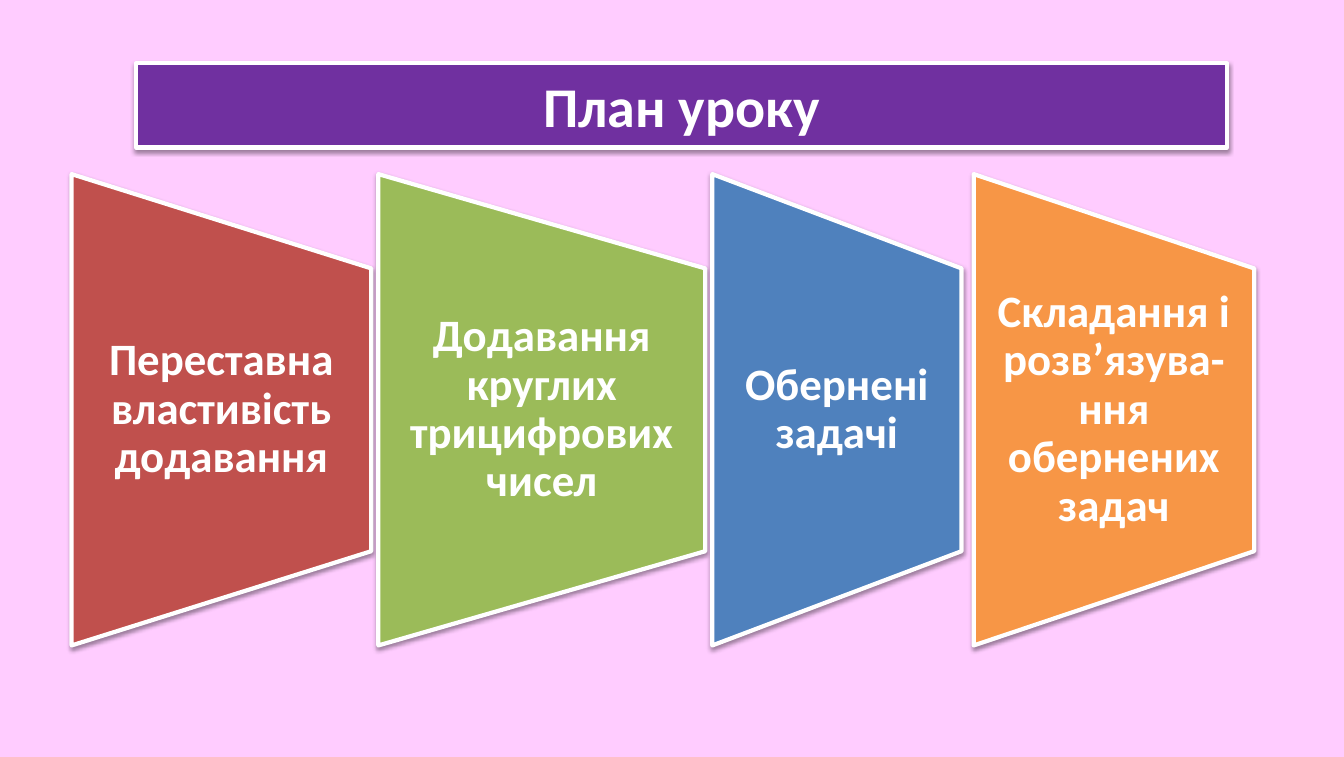
from dataclasses import dataclass

from lxml.etree import SubElement
from pptx import Presentation
from pptx.dml.color import RGBColor
from pptx.enum.shapes import MSO_SHAPE as Shape
from pptx.enum.text import MSO_ANCHOR as Anchor, MSO_AUTO_SIZE as AutoSize, PP_ALIGN as Align
from pptx.oxml.ns import qn
from pptx.util import Pt

PX = 9144
COLORS = {
    "pink": "FFCCFF",
    "purple": "7030A0",
    "orange": "F79646",
    "red": "C0504D",
    "green": "9BBB59",
    "blue": "4F81BD",
    "white": "FFFFFF",
    "black": "000000",
}
STAGE_CENTER_Y, STAGE_HEIGHT, TEXT_HEIGHT = 406, 467, 280


@dataclass
class Stage:
    text: str
    left: int
    width: int
    color: str


STAGES = [
    Stage("Складання і розв’язува-ння обернених задач", 965, 278, "orange"),
    Stage("Переставна властивість додавання", 71, 297, "red"),
    Stage("Додавання круглих трицифрових чисел", 375, 324, "green"),
    Stage("Обернені задачі", 706, 247, "blue"),
]


def rgb(name: str) -> RGBColor:
    return RGBColor.from_string(COLORS[name])


def px(*lengths: float) -> list[int]:
    return [round(length * PX) for length in lengths]


def set_attrs(target, values: dict) -> None:
    for name, value in values.items():
        setattr(target, name, value)


def style_shape(sp, color: str) -> None:
    sp.fill.solid()
    sp.fill.fore_color.rgb = rgb(color)
    sp.line.color.rgb = rgb("white")
    sp.line.width = Pt(3)
    effects = SubElement(sp._element.spPr, qn("a:effectLst"))
    shadow = SubElement(effects, qn("a:outerShdw"), blurRad="40000", dist="20000",
                        dir="5400000", rotWithShape="0")
    shade = SubElement(shadow, qn("a:srgbClr"), val=COLORS["black"])
    SubElement(shade, qn("a:alpha"), val="38000")


def write_text(sp, text: str, size: int, spacing: float, frame: dict) -> None:
    tf = sp.text_frame
    set_attrs(tf, {"word_wrap": True, "vertical_anchor": Anchor.MIDDLE, **frame})
    p = tf.paragraphs[0]
    set_attrs(p, {"alignment": Align.CENTER, "line_spacing": spacing})
    r = p.add_run()
    r.text = text
    set_attrs(r.font, {"name": "Calibri", "size": Pt(size), "bold": True})
    r.font.color.rgb = rgb("white")


def draw_title(slide) -> None:
    sp = slide.shapes.title
    left, top, width, height = px(135, 66, 1081, 77)
    set_attrs(sp, {"left": left, "top": top, "width": width, "height": height})
    style_shape(sp, "purple")
    write_text(sp, "План уроку", 40, 1.0, {"auto_size": AutoSize.SHAPE_TO_FIT_TEXT})


def draw_stage(slide, stage: Stage) -> None:
    center_x = stage.left + stage.width / 2
    sp = slide.shapes.add_shape(
        Shape.FLOWCHART_MANUAL_OPERATION,
        *px(center_x - STAGE_HEIGHT / 2, STAGE_CENTER_Y - stage.width / 2,
            STAGE_HEIGHT, stage.width))
    sp.rotation = 270
    style_shape(sp, stage.color)
    box = slide.shapes.add_textbox(
        *px(stage.left, STAGE_CENTER_Y - TEXT_HEIGHT / 2, stage.width, TEXT_HEIGHT))
    side, edge = px(22, 0)
    write_text(box, stage.text, 32, 0.9, {
        "margin_left": side, "margin_right": side,
        "margin_top": edge, "margin_bottom": edge,
    })


def main() -> None:
    prs = Presentation()
    prs.slide_width, prs.slide_height = px(1332, 750)
    slide = prs.slides.add_slide(prs.slide_layouts[5])
    slide.background.fill.solid()
    slide.background.fill.fore_color.rgb = rgb("pink")
    draw_title(slide)
    for stage in STAGES:
        draw_stage(slide, stage)
    prs.save("out.pptx")


if __name__ == "__main__":
    main()
